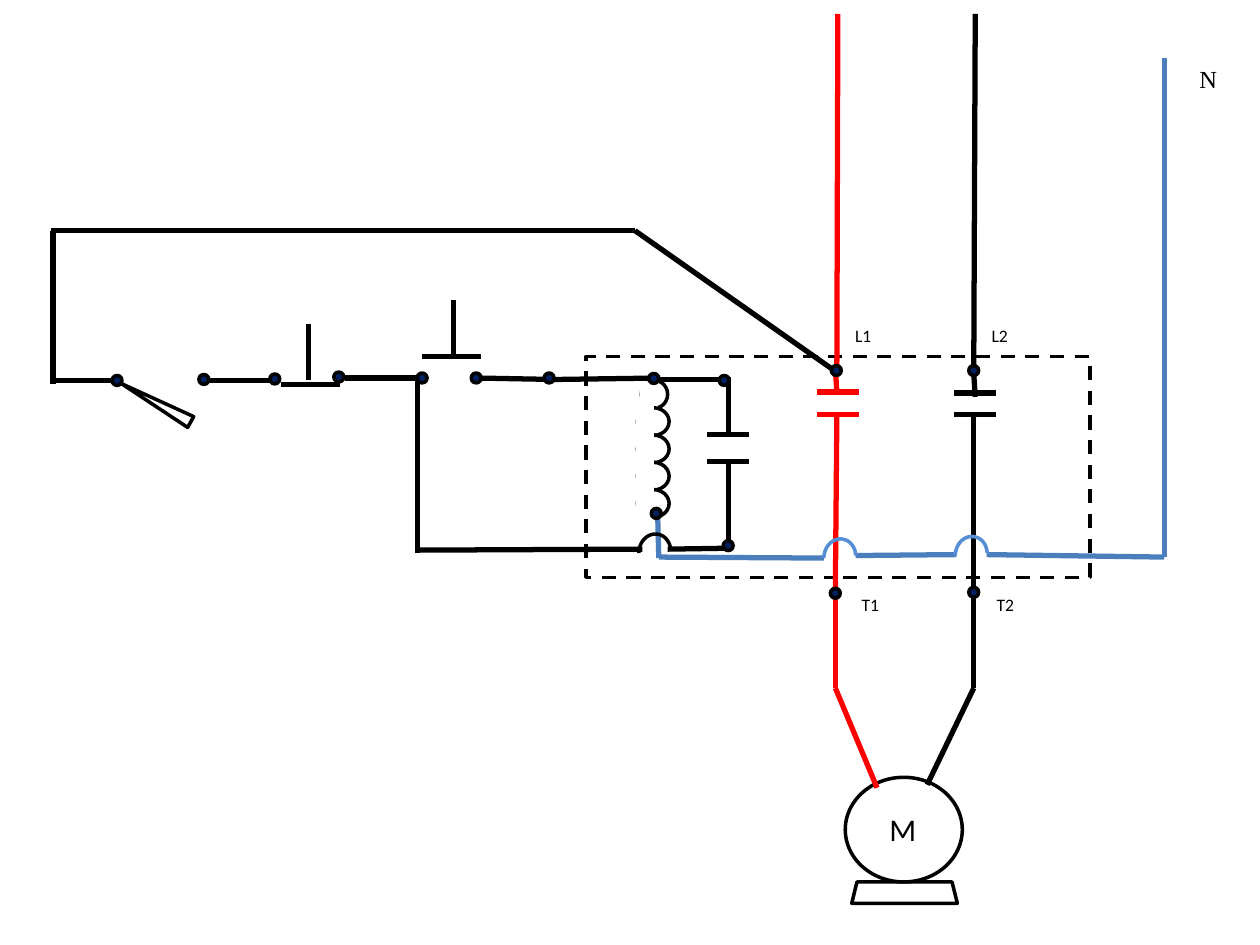
"""Draw a motor starter wiring diagram with its control circuit."""
import math
from itertools import pairwise

from lxml import etree
from pptx import Presentation, util as u
from pptx.dml.color import RGBColor
from pptx.enum import dml, shapes, text
from pptx.oxml.ns import qn

BLACK, RED, BLUE, HOP_BLUE = "000000", "FF0000", "4B7EBC", "558ED5"
NAVY, WHITE = "002060", "FFFFFF"

WIRES = [
    # colour, points in cm
    (BLACK, [(19.66, 8), (19.63, 7.54)]),
    (RED, [(16.87, 7.9), (16.84, 7.44)]),
    (BLACK, [(9.14, 7.19), (9.14, 6.05)]),
    (BLACK, [(8.51, 7.19), (9.7, 7.19)]),
    (BLACK, [(6.96, 7.62), (8.51, 7.62)]),
    (BLACK, [(5.66, 7.75), (6.86, 7.75)]),
    (BLACK, [(6.22, 7.67), (6.22, 6.53)]),
    (BLACK, [(4.24, 7.67), (5.44, 7.67)]),
    (BLACK, [(2.26, 7.67), (1.07, 7.67)]),
    (BLACK, [(1.07, 7.75), (1.07, 4.65)]),
    (BLACK, [(1.02, 4.65), (12.8, 4.65), (16.89, 7.52)]),
    (RED, [(16.84, 11.96), (16.84, 13.87), (17.68, 15.88)]),
    (BLACK, [(19.63, 7.37), (19.66, 0.28)]),
    (RED, [(16.87, 7.37), (16.89, 0.28)]),
    (RED, [(16.84, 11.86), (16.87, 8.36)]),
    (BLACK, [(19.63, 11.84), (19.63, 8.36)]),
    (BLACK, [(14.68, 8.76), (14.68, 7.62)]),
    (BLACK, [(14.68, 11.05), (14.68, 9.35)]),
    (BLUE, [(23.47, 1.17), (23.47, 11.23)]),
    (BLUE, [(23.47, 11.23), (19.89, 11.18)]),
    (BLUE, [(19.28, 11.18), (17.25, 11.2)]),
    (BLUE, [(16.61, 11.25), (13.28, 11.23)]),
    (BLUE, [(13.28, 11.25), (13.26, 10.46)]),
    (BLACK, [(9.58, 7.62), (11.2, 7.65)]),
    (BLACK, [(11.18, 7.65), (13.31, 7.62)]),
    (BLACK, [(13.11, 7.65), (14.73, 7.65)]),
    (BLACK, [(8.41, 11.15), (8.41, 7.67)]),
    (BLACK, [(8.41, 11.09), (12.95, 11.07)]),
    (BLACK, [(13.46, 11.07), (14.76, 11.05)]),
    (BLACK, [(19.63, 11.86), (19.63, 13.87), (18.69, 15.82)]),
]
CONTACTS = [(RED, 16.9, 7.9, 8.36), (BLACK, 19.65, 7.92, 8.36),
            (BLACK, 14.68, 8.76, 9.3)]
HOPS = [(HOP_BLUE, 16.61, 11.25), (HOP_BLUE, 19.26, 11.2), (BLACK, 12.88, 11.15)]
DOTS = [(9.6, 7.62), (8.51, 7.62), (6.83, 7.6), (5.54, 7.64), (4.11, 7.65),
        (2.36, 7.67), (16.86, 7.47), (19.63, 7.47), (11.07, 7.62),
        (19.63, 11.94), (16.84, 11.96), (13.18, 7.63), (13.23, 10.35),
        (14.6, 7.67), (14.68, 11)]
LABELS = [("M", 17.68, 16.2, 1, 1.02, 18, "Calibri"),
          ("L1", 16.99, 6.43, 1, 0.69, 10, "Calibri"),
          ("L2", 19.74, 6.43, 1, 0.69, 10, "Calibri"),
          ("T1", 17.12, 11.84, 1, 0.69, 10, "Calibri"),
          ("T2", 19.84, 11.84, 1, 0.69, 10, "Calibri"),
          ("N", 23.93, 1.17, 0.84, 0.86, 14, "Times New Roman")]
TURNS, PITCH = 5, 0.55
HOP_W, HOP_H, HOP_RISE = 0.64, 0.36, 0.05


def rgb(value):
    return RGBColor.from_string(value)


def style(s, fill=None, line=BLACK, width=2):
    s.shadow.inherit = False
    if fill:
        s.fill.solid()
        s.fill.fore_color.rgb = rgb(fill)
    else:
        s.fill.background()
    s.line.color.rgb = rgb(line)
    s.line.width = u.Pt(width)
    return s


def add_shape(kind, x, y, w, h, **fmt):
    box = [u.Cm(v) for v in (x, y, w, h)]
    return style(slide.shapes.add_shape(kind, *box), **fmt)


def add_wire(color, points):
    for start, end in pairwise(points):
        s = slide.shapes.add_connector(
            shapes.MSO_CONNECTOR.STRAIGHT, *[u.Cm(v) for v in start + end])
        s.line.color.rgb = rgb(color)
        s.line.width = u.Pt(3)
        etree.SubElement(s._element.spPr, qn("a:effectLst"))


def add_hop(color, x, y, steps=24):
    angles = [math.pi * i / steps for i in range(steps + 1)]
    points = [(u.Cm(x + HOP_W * (1 - math.cos(a)) / 2),
               u.Cm(y - HOP_H * math.sin(a) - HOP_RISE * i / steps))
              for i, a in enumerate(angles)]
    builder = slide.shapes.build_freeform(*points[0])
    builder.add_line_segments(points[1:], close=False)
    style(builder.convert_to_shape(), line=color)


def add_text(content, *, x, y, w, h, size, font, color=BLACK):
    s = slide.shapes.add_textbox(*[u.Cm(v) for v in (x, y, w, h)])
    tf = s.text_frame
    tf.word_wrap = True
    tf.auto_size = text.MSO_AUTO_SIZE.SHAPE_TO_FIT_TEXT
    r = tf.paragraphs[0].add_run()
    r.text = content
    r.font.size = u.Pt(size)
    r.font.name = font
    r.font.color.rgb = rgb(color)


prs = Presentation()
prs.slide_width, prs.slide_height = u.Cm(25.4), u.Cm(19.05)
slide = prs.slides.add_slide(prs.slide_layouts[6])
KIND = shapes.MSO_SHAPE

contactor = add_shape(KIND.RECTANGLE, 11.81, 7.19, 10.16, 4.45)
contactor.line.dash_style = dml.MSO_LINE.DASH
switch = add_shape(KIND.ISOSCELES_TRIANGLE, 3.02, 7.32, 0.25, 1.6)
switch.rotation = 299
add_shape(KIND.OVAL, 17.04, 15.67, 2.36, 2.11)
base = add_shape(KIND.TRAPEZOID, 17.17, 17.78, 2.13, 0.43)

for i in range(TURNS):
    top = 7.67 + i * PITCH
    left, width = (12.85, 0.64) if i else (12.93, 0.53)
    add_shape(KIND.OVAL, left, top, width, 0.56, fill=WHITE)
    add_shape(KIND.RECTANGLE, left, top - 0.15, 0.3, 1.04, fill=WHITE, line=WHITE)

for color, points in WIRES:
    add_wire(color, points)
for color, cx, *levels in CONTACTS:
    for y in levels:
        add_wire(color, [(cx - 0.42, y), (cx + 0.42, y)])
for hop in HOPS:
    add_hop(*hop)
for cx, cy in DOTS:
    add_shape(KIND.OVAL, cx - 0.1, cy - 0.1, 0.2, 0.2, fill=NAVY)
for content, x, y, w, h, size, font in LABELS:
    add_text(content, x=x, y=y, w=w, h=h, size=size, font=font)

prs.save("out.pptx")
